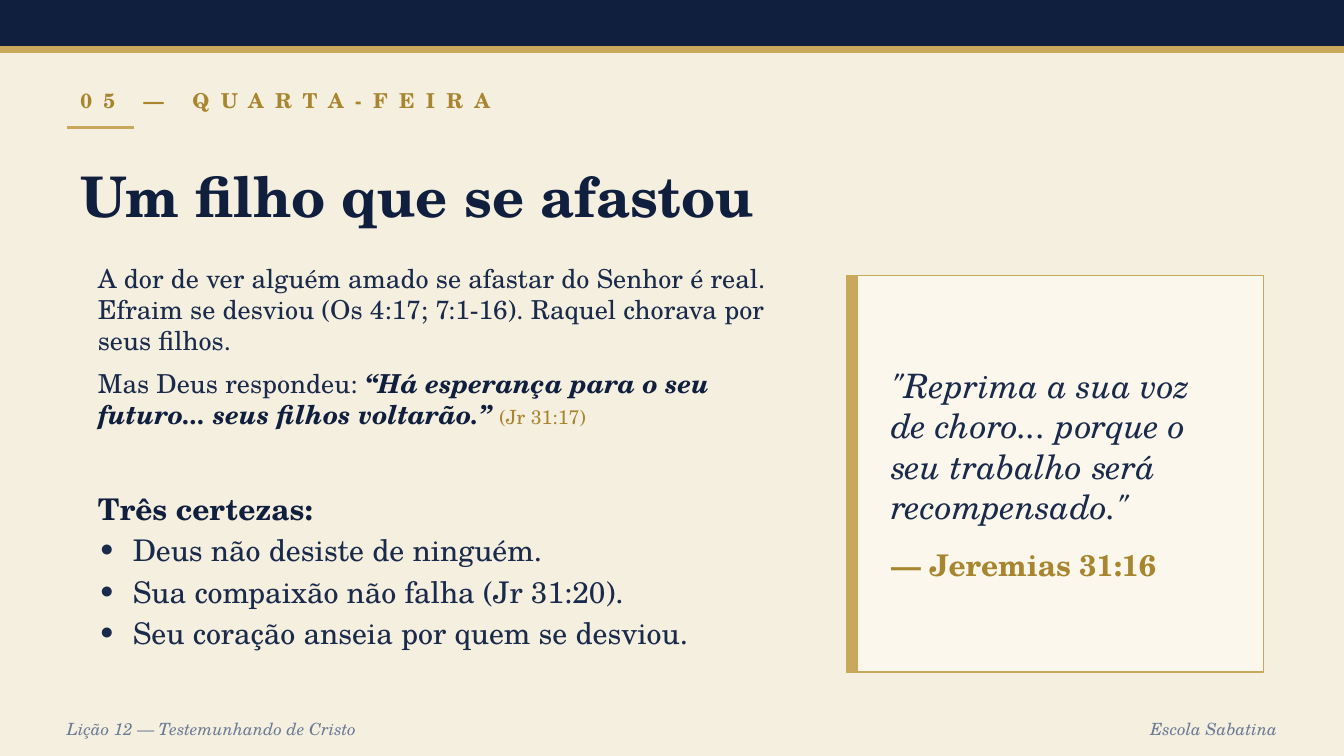
from lxml import etree
from pptx import Presentation
from pptx.dml.color import RGBColor
from pptx.enum.shapes import MSO_CONNECTOR, MSO_SHAPE
from pptx.enum.text import MSO_ANCHOR, MSO_AUTO_SIZE, PP_ALIGN
from pptx.oxml.ns import qn
from pptx.util import Inches, Pt

FONT = "TeX Gyre Schola"
COLORS = {
    "navy": "0F1F3D", "ink": "1A2A4A", "gold": "C9A85C", "dark_gold": "A8862F",
    "slate": "6B7A95", "cream": "F5EFE0", "card": "FBF7EC",
}

# Run styles: size, colour, bold, italic
STYLES = {
    "footer": (9, "slate", False, True),
    "eyebrow": (11, "dark_gold", True, False),
    "title": (30, "navy", True, False),
    "body": (14, "ink", False, False),
    "promise": (14, "navy", True, True),
    "reference": (10.5, "dark_gold", False, False),
    "heading": (16, "navy", True, False),
    "certainty": (16, "ink", False, False),
    "quote": (18, "ink", False, True),
    "source": (16, "dark_gold", True, False),
}

# Each paragraph is a list of (text, style) runs
TITLE = [[("Um filho que se afastou", "title")]]
EYEBROW = [[("05 — QUARTA-FEIRA", "eyebrow")]]
FOOTER_LEFT = [[("Lição 12 — Testemunhando de Cristo", "footer")]]
FOOTER_RIGHT = [[("Escola Sabatina", "footer")]]
STORY = [
    [("A dor de ver alguém amado se afastar do Senhor é real. Efraim se desviou "
      "(Os 4:17; 7:1-16). Raquel chorava por seus filhos.", "body")],
    [("Mas Deus respondeu: ", "body"),
     ("“Há esperança para o seu futuro... seus filhos voltarão.” ", "promise"),
     ("(Jr 31:17)", "reference")],
]
CERTAINTIES = [
    [("Três certezas:", "heading")],
    [("Deus não desiste de ninguém.", "certainty")],
    [("Sua compaixão não falha (Jr 31:20).", "certainty")],
    [("Seu coração anseia por quem se desviou.", "certainty")],
]
QUOTE = [
    [("\"Reprima a sua voz de choro... porque o seu trabalho será recompensado.\"", "quote")],
    [("— Jeremias 31:16", "source")],
]

BARS = [
    ((0, 0, 10, 0.35), "navy", "navy", 1),
    ((0, 0.35, 10, 0.04), "gold", "gold", 1),
    ((6.3, 2.05, 3.1, 2.95), "card", "gold", 0.75),
    ((6.3, 2.05, 0.08, 2.95), "gold", "gold", 1),
]


def rgb(name):
    return RGBColor.from_string(COLORS[name])


def add_bar(slide, box, fill, line, width):
    bar = slide.shapes.add_shape(MSO_SHAPE.RECTANGLE, *map(Inches, box))
    bar.shadow.inherit = False
    bar.fill.solid()
    bar.fill.fore_color.rgb = rgb(fill)
    bar.line.color.rgb = rgb(line)
    bar.line.width = Pt(width)


def write(frame, paragraphs, anchor=MSO_ANCHOR.TOP, align=PP_ALIGN.LEFT, gap=0):
    """Fill a text frame; gap is the space in points between paragraphs."""
    frame.word_wrap = True
    frame.auto_size = MSO_AUTO_SIZE.NONE
    frame.vertical_anchor = anchor
    for index, runs in enumerate(paragraphs):
        paragraph = frame.add_paragraph() if index else frame.paragraphs[0]
        paragraph.alignment = align
        if index and gap:
            paragraph.space_before = Pt(gap)
        for text, style in runs:
            size, color, bold, italic = STYLES[style]
            run = paragraph.add_run()
            run.text = text
            run.font.name = FONT
            run.font.size = Pt(size)
            run.font.color.rgb = rgb(color)
            run.font.bold = bold
            run.font.italic = italic
    return frame


def add_text(slide, box, paragraphs, **layout):
    return write(slide.shapes.add_textbox(*map(Inches, box)).text_frame, paragraphs, **layout)


def add_bullet(paragraph, indent):
    properties = paragraph._p.get_or_add_pPr()
    properties.set("marL", str(Inches(indent)))
    properties.set("indent", str(-Inches(indent)))
    etree.SubElement(properties, qn("a:buFont")).set("typeface", FONT)
    etree.SubElement(properties, qn("a:buChar")).set("char", "•")


def main():
    deck = Presentation()
    deck.slide_width = Inches(10)
    deck.slide_height = deck.slide_width * 9 // 16
    slide = deck.slides.add_slide(deck.slide_layouts[5])
    slide.background.fill.solid()
    slide.background.fill.fore_color.rgb = rgb("cream")

    title = slide.shapes.title
    title.left, title.top, title.width, title.height = map(Inches, (0.5, 1.05, 9, 0.8))
    middle = MSO_ANCHOR.MIDDLE
    write(title.text_frame, TITLE, anchor=middle)

    for bar in BARS:
        add_bar(slide, *bar)

    add_text(slide, (0.4, 5.3, 6, 0.25), FOOTER_LEFT, anchor=middle)
    add_text(slide, (7.6, 5.3, 2, 0.25), FOOTER_RIGHT, anchor=middle, align=PP_ALIGN.RIGHT)

    eyebrow = add_text(slide, (0.5, 0.6, 9, 0.3), EYEBROW, anchor=middle)
    eyebrow.paragraphs[0].runs[0].font._element.set("spc", "600")
    rule = slide.shapes.add_connector(
        MSO_CONNECTOR.STRAIGHT, *map(Inches, (0.5, 0.95, 1, 0.95)))
    rule.line.color.rgb = rgb("gold")
    rule.line.width = Pt(1.5)
    etree.SubElement(rule._element.spPr, qn("a:effectLst"))

    add_text(slide, (0.63, 1.9, 5.3, 2), STORY, gap=6)
    certainties = add_text(slide, (0.63, 3.6, 5.3, 1.3), CERTAINTIES, gap=3)
    for paragraph in certainties.paragraphs[1:]:
        add_bullet(paragraph, 0.26)

    quote = add_text(slide, (6.55, 2.15, 2.7, 2.75), QUOTE, anchor=middle, gap=11)
    quote.margin_left = quote.margin_right = Inches(0.08)
    quote.margin_top = quote.margin_bottom = Inches(0.08)

    deck.save("out.pptx")


if __name__ == "__main__":
    main()
